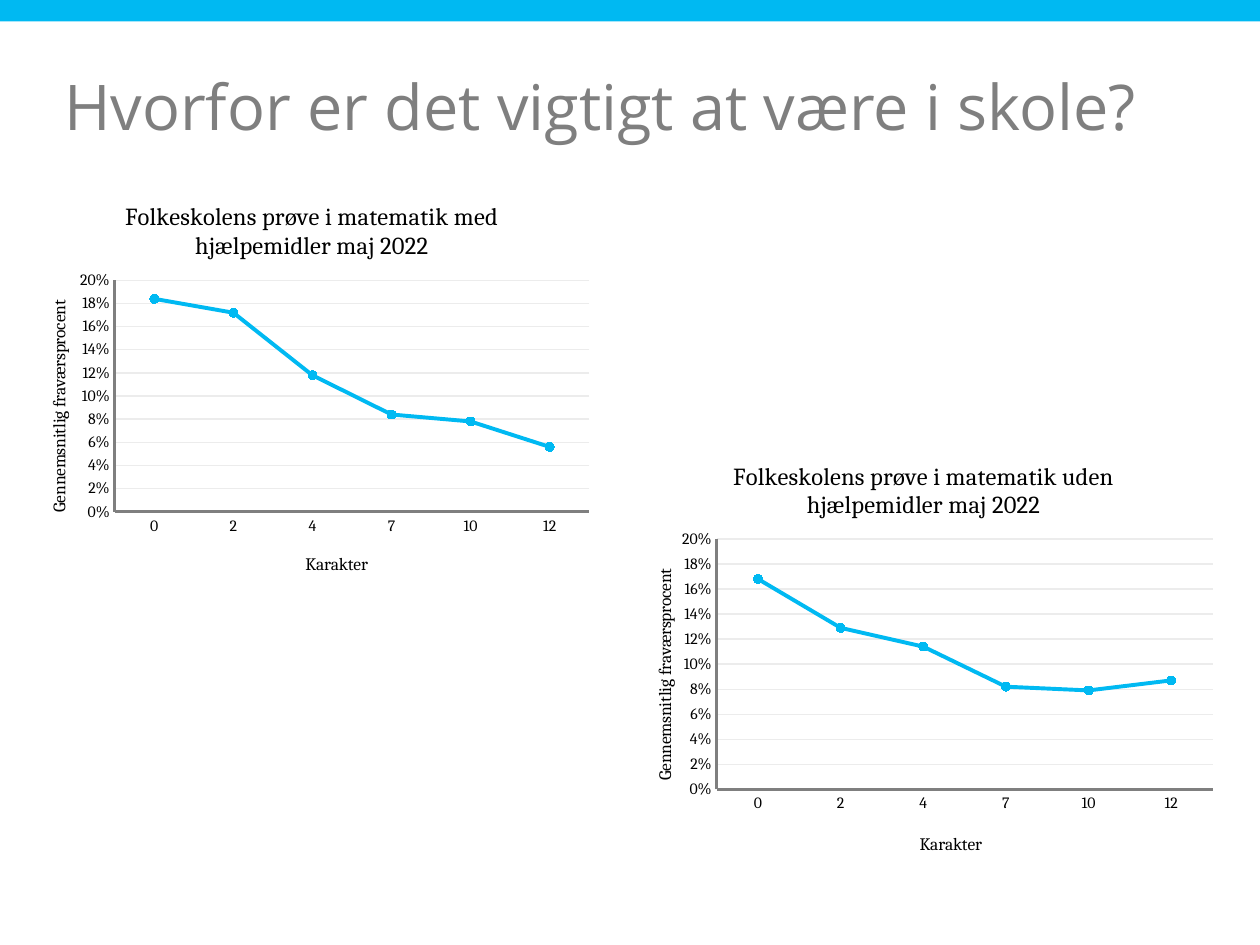
from lxml.etree import SubElement
from pptx import Presentation
from pptx.chart.data import CategoryChartData
from pptx.dml.color import RGBColor
from pptx.enum.chart import XL_CHART_TYPE as ChartType, XL_MARKER_STYLE as Marker
from pptx.enum.chart import XL_TICK_MARK as Tick
from pptx.enum.shapes import MSO_SHAPE as Shape
from pptx.enum.text import MSO_ANCHOR as Anchor, MSO_AUTO_SIZE as AutoSize, PP_ALIGN as Align
from pptx.oxml.ns import qn
from pptx.util import Inches, Pt

BLUE = RGBColor(0x00, 0xB9, 0xF2)
GREY = RGBColor(0x7F, 0x7F, 0x7F)
GRID = RGBColor(0xEC, 0xEC, 0xEC)
BLACK = RGBColor(0, 0, 0)

# Content: positions in inches, layouts as fractions of the chart
TITLE = "Hvorfor er det vigtigt at være i skole?"
GRADES = ["0", "2", "4", "7", "10", "12"]
GRADE_TITLE = "Karakter"
ABSENCE_TITLE = "Gennemsnitlig fraværsprocent"
CHARTS = [
    dict(title="Folkeskolens prøve i matematik med hjælpemidler maj 2022",
         at=(0.12, 1.39, 4.65, 3.34),
         absence=[0.184, 0.172, 0.118, 0.084, 0.078, 0.056],
         plot=(0.17, 0.25, 0.81, 0.55), heading=(0.18, 0.05),
         grade=(0.49, 0.89), percent=(0.05, 0.29)),
    dict(title="Folkeskolens prøve i matematik uden hjælpemidler maj 2022",
         at=(4.92, 3.44, 4.8, 3.49),
         absence=[0.168, 0.129, 0.114, 0.082, 0.079, 0.087],
         plot=(0.16, 0.24, 0.82, 0.57), heading=(0.18, 0.05),
         grade=(0.49, 0.9), percent=(0.05, 0.3)),
]


def style(font, size, color=BLACK, name="Cambria"):
    font.size, font.name, font.bold = Pt(size), name, False
    font.color.rgb = color


def set_layout(parent, index, place):
    """Place a chart part by hand: (x, y) or (x, y, w, h)."""
    for old in parent.findall(qn("c:layout")):
        parent.remove(old)
    layout = SubElement(parent, qn("c:layout"))
    parent.insert(index, layout)
    manual = SubElement(layout, qn("c:manualLayout"))
    if len(place) == 4:
        SubElement(manual, qn("c:layoutTarget")).set("val", "inner")
    for tag in ("xMode", "yMode"):
        SubElement(manual, qn("c:" + tag)).set("val", "edge")
    for tag, value in zip("xywh", place):
        SubElement(manual, qn("c:" + tag)).set("val", str(value))


def add_title(title, text, size, place):
    r = title.text_frame.paragraphs[0].add_run()
    r.text = text
    style(r.font, size)
    set_layout(title._element, 1, place)


def style_axis(axis, text, place):
    axis.major_tick_mark = axis.minor_tick_mark = Tick.NONE
    style(axis.tick_labels.font, 9)
    axis.format.line.color.rgb = GREY
    axis.format.line.width = Pt(2)
    add_title(axis.axis_title, text, 10, place)


def add_absence_chart(s, spec):
    data = CategoryChartData(number_format="0.0%")
    data.categories = GRADES
    data.add_series("Series 1", spec["absence"])
    frame = s.shapes.add_chart(ChartType.LINE_MARKERS, *map(Inches, spec["at"]), data)
    chart = frame.chart
    style(chart.font, 10)
    chart.has_legend = False
    chart.has_title = True
    add_title(chart.chart_title, spec["title"], 14, spec["heading"])

    # Axes and grid
    style_axis(chart.category_axis, GRADE_TITLE, spec["grade"])
    values = chart.value_axis
    style_axis(values, ABSENCE_TITLE, spec["percent"])
    values.minimum_scale, values.maximum_scale, values.major_unit = 0, 0.2, 0.02
    values.tick_labels.number_format = "0%"
    values.tick_labels.number_format_is_linked = False
    values.has_major_gridlines = True
    values.major_gridlines.format.line.color.rgb = GRID
    values.major_gridlines.format.line.width = Pt(0.75)

    # Line and markers
    plot = chart.plots[0]
    plot.vary_by_categories = False
    line = plot.series[0]
    line.smooth = False
    line.format.line.color.rgb = BLUE
    line.format.line.width = Pt(2.25)
    line.marker.style, line.marker.size = Marker.CIRCLE, 5
    line.marker.format.fill.solid()
    line.marker.format.fill.fore_color.rgb = BLUE
    line.marker.format.line.color.rgb = BLUE
    set_layout(chart._chartSpace.chart.plotArea, 0, spec["plot"])


def main():
    prs = Presentation()
    prs.slide_width, prs.slide_height = Inches(10), Inches(7.5)
    s = prs.slides.add_slide(prs.slide_layouts[5])

    # Top band
    band = s.shapes.add_shape(Shape.RECTANGLE, 0, 0, prs.slide_width, Inches(0.17))
    band.shadow.inherit = False
    band.fill.solid()
    band.fill.fore_color.rgb = BLUE
    band.line.fill.background()

    # Slide title
    sp = s.shapes.title
    sp.left, sp.top, sp.width, sp.height = map(Inches, (0.51, 0.64, 8.94, 1.22))
    tf = sp.text_frame
    tf.margin_left = tf.margin_top = tf.margin_right = tf.margin_bottom = 0
    tf.vertical_anchor, tf.auto_size, tf.word_wrap = Anchor.TOP, AutoSize.NONE, True
    p = tf.paragraphs[0]
    p.alignment, p.line_spacing = Align.LEFT, 0.83
    r = p.add_run()
    r.text = TITLE
    style(r.font, 36, GREY, "Open Sans")

    for spec in CHARTS:
        add_absence_chart(s, spec)
    prs.save("out.pptx")


if __name__ == "__main__":
    main()
